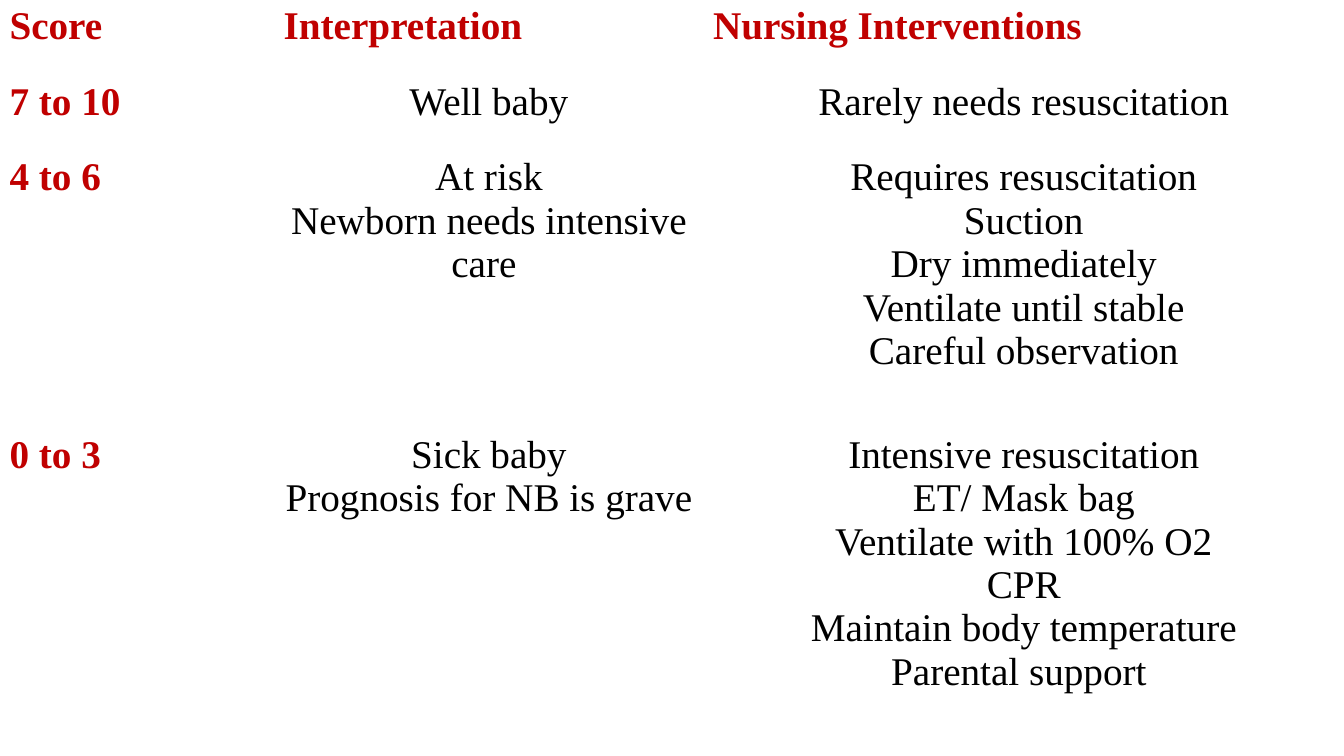
"""Build the newborn score interpretation slide."""
from dataclasses import dataclass

import pptx
import pptx.dml.color
import pptx.enum.text
import pptx.util

Cm = pptx.util.Cm
RGB = pptx.dml.color.RGBColor
ALIGN = pptx.enum.text.PP_ALIGN


@dataclass(frozen=True)
class Theme:
    """Colours, font and type size of the slide."""
    font: str = "Times New Roman"
    size: int = 28
    heading: str = "C00000"
    body: str = "000000"
    back: str = "FFFFFF"


THEME = Theme()
SLIDE_SIZE = (33.87, 19.05)
COL_WIDTHS = (6.91, 10.82, 16.14)
ROW_HEIGHTS = (1.91, 1.9, 6.99, 8.25)
MARGINS = {"margin_left": Cm(0.24), "margin_right": Cm(0.24),
           "margin_top": Cm(0.12), "margin_bottom": Cm(0.12)}
ROWS = (
    ("Score", "Interpretation", "Nursing Interventions"),
    ("7 to 10", "Well baby", "Rarely needs resuscitation"),
    ("4 to 6", "At risk\nNewborn needs intensive care ",
     "Requires resuscitation\nSuction\nDry immediately\n"
     "Ventilate until stable\nCareful observation"),
    ("0 to 3", "Sick baby\nPrognosis for NB is grave",
     "Intensive resuscitation\nET/ Mask bag\nVentilate with 100% O2\nCPR\n"
     "Maintain body temperature\nParental support "),
)


def set_attrs(obj, values):
    """Set every attribute named in values on obj."""
    for name, value in values.items():
        setattr(obj, name, value)


def fill_cell(cell, text, is_heading):
    """Write and format one table cell."""
    set_attrs(cell, MARGINS)
    cell.fill.solid()
    cell.fill.fore_color.rgb = RGB.from_string(THEME.back)
    cell.text_frame.text = text
    font = {"name": THEME.font, "size": pptx.util.Pt(THEME.size), "bold": is_heading}
    colour = THEME.heading if is_heading else THEME.body
    for p in cell.text_frame.paragraphs:
        p.alignment = ALIGN.LEFT if is_heading else ALIGN.CENTER
        for r in p.runs:
            set_attrs(r.font, font)
            r.font.color.rgb = RGB.from_string(colour)


def add_score_table(s):
    """Add the table that covers the slide."""
    width, height = SLIDE_SIZE
    table = s.shapes.add_table(len(ROWS), len(COL_WIDTHS), Cm(0), Cm(0),
                               Cm(width), Cm(height)).table
    set_attrs(table, {"first_row": False, "horz_banding": False})
    for column, col_width in zip(table.columns, COL_WIDTHS):
        column.width = Cm(col_width)
    for i, (row, row_height) in enumerate(zip(table.rows, ROW_HEIGHTS)):
        row.height = Cm(row_height)
        for j, text in enumerate(ROWS[i]):
            fill_cell(table.cell(i, j), text, i == 0 or j == 0)


def main():
    """Build and save the presentation."""
    prs = pptx.Presentation()
    width, height = SLIDE_SIZE
    set_attrs(prs, {"slide_width": Cm(width), "slide_height": Cm(height)})
    s = prs.slides.add_slide(prs.slide_layouts[6])
    add_score_table(s)
    prs.save("out.pptx")


if __name__ == "__main__":
    main()
